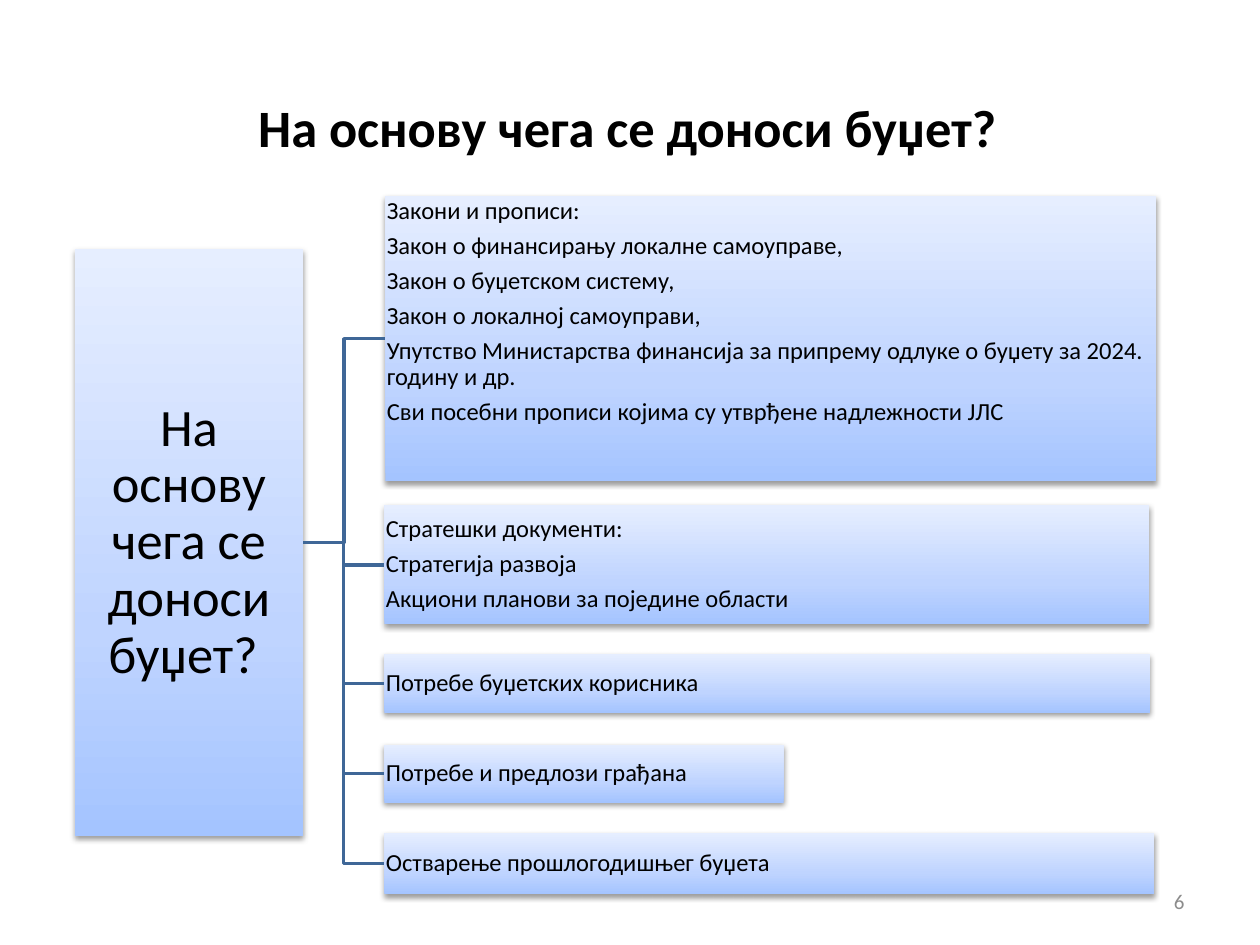
from lxml.etree import SubElement
from pptx import Presentation
from pptx.dml.color import RGBColor
from pptx.enum.shapes import MSO_CONNECTOR as Connector, MSO_SHAPE as Shape
from pptx.enum.text import MSO_ANCHOR as Anchor, PP_ALIGN as Align
from pptx.oxml.ns import qn
from pptx.util import Cm, Pt

BLACK = RGBColor(0x00, 0x00, 0x00)
GREY = RGBColor(0x8C, 0x8C, 0x8C)
LINE_BLUE = RGBColor(0x3F, 0x67, 0x97)
GRADIENT = [
    (0, RGBColor(0xA4, 0xC4, 0xFF)),
    (35, RGBColor(0xBF, 0xD4, 0xFF)),
    (100, RGBColor(0xE6, 0xEE, 0xFF)),
]
FONT = "Calibri"
TITLE = "На основу чега се доноси буџет?"
BRANCHES = [
    ((7.77, 3.96, 15.54, 5.74), Anchor.TOP, [
        "Закони и прописи:",
        "Закон о финансирању локалне самоуправе,",
        "Закон о буџетском систему,",
        "Закон о локалној самоуправи,",
        "Упутство Министарства финансија за припрему одлуке о буџету за 2024. годину и др.",
        "Сви посебни прописи којима су утврђене надлежности ЈЛС",
    ]),
    ((7.75, 10.19, 15.42, 2.39), Anchor.MIDDLE, [
        "Стратешки документи:",
        "Стратегија развоја",
        "Акциони планови за поједине области",
    ]),
    ((7.75, 13.18, 15.44, 1.19), Anchor.MIDDLE, ["Потребе буџетских корисника"]),
    ((7.75, 15.01, 8.05, 1.17), Anchor.MIDDLE, ["Потребе и предлози грађана"]),
    ((7.75, 16.79, 15.52, 1.24), Anchor.MIDDLE, ["Остварење прошлогодишњег буџета"]),
]


def write_text(frame, lines, size, color=BLACK, align=Align.LEFT, anchor=Anchor.MIDDLE,
               bold=False):
    frame.word_wrap = True
    frame.vertical_anchor = anchor
    for index, line in enumerate(lines):
        paragraph = frame.paragraphs[0] if index == 0 else frame.add_paragraph()
        paragraph.text = line
        paragraph.alignment = align
        font = paragraph.font
        font.name, font.size, font.bold = FONT, Pt(size), bold
        font.color.rgb = color


def add_label(slide, box, text, size, **style):
    label = slide.shapes.add_textbox(*map(Cm, box))
    write_text(label.text_frame, [text], size, **style)


def fill_with_gradient(shape):
    shape.fill.gradient()
    shape.fill.gradient_angle = 90
    stops = shape._element.spPr.find(".//" + qn("a:gsLst"))
    for stop in list(stops):
        stops.remove(stop)
    for position, color in GRADIENT:
        stop = SubElement(stops, qn("a:gs"), pos=str(position * 1000))
        SubElement(stop, qn("a:srgbClr"), val=str(color))


def add_soft_shadow(shape):
    shape.shadow.inherit = False
    effects = shape._element.spPr.find(qn("a:effectLst"))
    shadow = SubElement(effects, qn("a:outerShdw"), blurRad=str(Pt(3.1)), dist=str(Pt(1.6)),
                        dir="5400000", rotWithShape="0")
    color = SubElement(shadow, qn("a:srgbClr"), val="000000")
    SubElement(color, qn("a:alpha"), val="38000")


def add_node(slide, box, lines, size, inset, **style):
    node = slide.shapes.add_shape(Shape.RECTANGLE, *map(Cm, box))
    node.line.fill.background()
    fill_with_gradient(node)
    add_soft_shadow(node)
    frame = node.text_frame
    frame.margin_left = frame.margin_right = Cm(inset)
    frame.margin_top = frame.margin_bottom = Cm(inset)
    write_text(frame, lines, size, **style)
    for paragraph in frame.paragraphs:
        paragraph.line_spacing = 0.9
        paragraph.space_after = Pt(size * 0.35)
    return node


def join(slide, root, branch):
    """Elbow line from the root's right side to the branch's left side."""
    connector = slide.shapes.add_connector(Connector.ELBOW, 0, 0, 0, 0)
    connector.begin_connect(root, 3)
    connector.end_connect(branch, 1)
    connector.line.color.rgb = LINE_BLUE
    connector.line.width = Pt(2)
    SubElement(connector._element.spPr, qn("a:effectLst"))


def add_tree(slide, root_box):
    root = add_node(slide, root_box, [TITLE + " "], 30, 0.05, align=Align.CENTER)
    for box, anchor, lines in BRANCHES:
        join(slide, root, add_node(slide, box, lines, 14, 0.03, anchor=anchor))


def main():
    presentation = Presentation()
    presentation.slide_width, presentation.slide_height = Cm(25.4), Cm(19.05)
    slide = presentation.slides.add_slide(presentation.slide_layouts[6])
    add_label(slide, (1.22, 1.37, 22.86, 2.36), TITLE, 30, align=Align.CENTER, bold=True)
    add_label(slide, (18.2, 17.66, 5.93, 1.01), "6", 12, color=GREY, align=Align.RIGHT)
    add_tree(slide, (1.51, 5.02, 4.6, 11.84))
    presentation.save("out.pptx")


if __name__ == "__main__":
    main()
